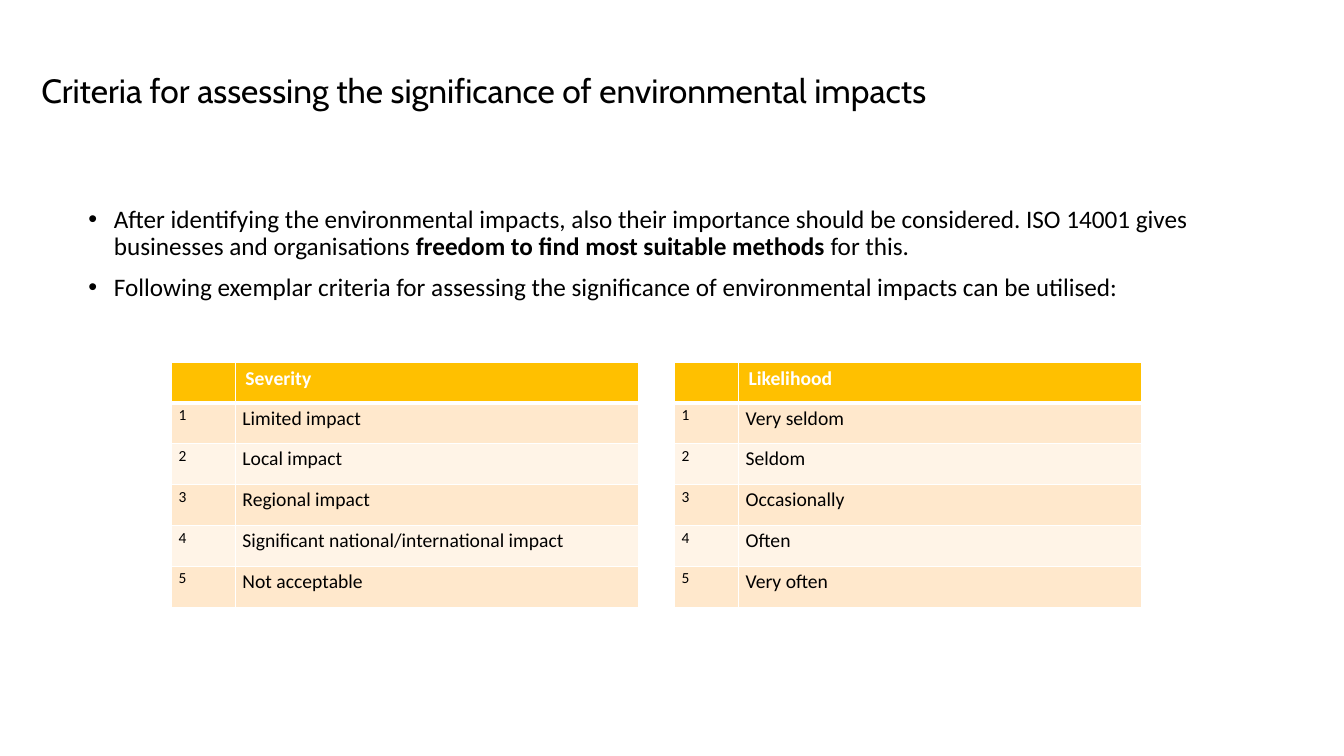
"""Build a slide on criteria for assessing environmental impacts."""
from lxml import etree
from pptx import Presentation
from pptx.dml.color import RGBColor
from pptx.enum import text
from pptx.oxml import ns
from pptx.util import Cm, Pt

TITLE = "Criteria for assessing the significance of environmental impacts"
POINTS = [
    [("After identifying the environmental impacts, also their importance should be considered. "
      "ISO 14001 gives businesses and organisations ", False),
     ("freedom to find most suitable methods ", True),
     ("for this.", False)],
    [("Following exemplar criteria for assessing the significance of environmental impacts "
      "can be utilised:", False)],
]
SCALES = [
    ("Severity", ["Limited impact", "Local impact", "Regional impact",
                  "Significant national/international impact", "Not acceptable"]),
    ("Likelihood", ["Very seldom", "Seldom", "Occasionally", "Often", "Very often"]),
]
BLACK, WHITE, HEADER = "000000", "FFFFFF", "FFC000"
BANDS = ["FFE8CC", "FFF4E7"]
COLUMNS = [1.61, 10.16]
ROW_HEIGHT, TABLE_LEFT, TABLE_TOP, TABLE_GAP = 1.03, 4.32, 9.12, 0.91


def paint(target, color):
    target.rgb = RGBColor.from_string(color)


def add_span(para, words, size, color=BLACK, bold=False, font="Calibri"):
    span = para.add_run()
    span.text = words
    span.font.name, span.font.size, span.font.bold = font, Pt(size), bold
    paint(span.font.color, color)


def place(shape, left, top, width, height):
    shape.left, shape.top, shape.width, shape.height = map(Cm, (left, top, width, height))


def add_bullet(para):
    props = para._p.get_or_add_pPr()
    props.set("marL", str(Cm(0.64)))
    props.set("indent", str(-Cm(0.64)))
    etree.SubElement(props, ns.qn("a:buFont")).set("typeface", "Arial")
    etree.SubElement(props, ns.qn("a:buChar")).set("char", "•")


def add_borders(cell, top, bottom):
    props = cell._tc.get_or_add_tcPr()
    for side, width in (("L", 1), ("R", 1), ("T", top), ("B", bottom)):
        line = etree.SubElement(props, ns.qn(f"a:ln{side}"), w=str(Pt(width)))
        fill = etree.SubElement(line, ns.qn("a:solidFill"))
        etree.SubElement(fill, ns.qn("a:srgbClr"), val=WHITE)


def add_scale(page, left, heading, levels):
    rows = [("", heading)] + [(str(i), level) for i, level in enumerate(levels, 1)]
    table = page.shapes.add_table(len(rows), len(COLUMNS), Cm(left), Cm(TABLE_TOP),
                                  Cm(sum(COLUMNS)), Cm(ROW_HEIGHT * len(rows))).table
    for column, width in zip(table.columns, COLUMNS):
        column.width = Cm(width)
    for r, row in enumerate(rows):
        for c, words in enumerate(row):
            cell = table.cell(r, c)
            add_borders(cell, 3 if r == 1 else 1, 3 if r == 0 else 1)
            cell.fill.solid()
            paint(cell.fill.fore_color, BANDS[(r - 1) % 2] if r else HEADER)
            para = cell.text_frame.paragraphs[0]
            if r:
                cell.margin_left = cell.margin_right = Cm(0.18)
                cell.margin_top = cell.margin_bottom = 0
                para.line_spacing = 1.15
            if words:
                add_span(para, words, 14 if c else 11, BLACK if r else WHITE, r == 0)


def main():
    deck = Presentation()
    deck.slide_width, deck.slide_height = Cm(33.87), Cm(19.05)
    page = deck.slides.add_slide(deck.slide_layouts[5])

    title = page.shapes.title
    place(title, 0.79, 0.94, 30.48, 2.77)
    title.text_frame.vertical_anchor = text.MSO_ANCHOR.MIDDLE
    para = title.text_frame.paragraphs[0]
    para.alignment, para.line_spacing = text.PP_ALIGN.LEFT, 0.9
    add_span(para, TITLE, 24, font="Cabin")

    box = page.shapes.add_textbox(Cm(1.98), Cm(5.08), Cm(30.48), Cm(9.19))
    frame = box.text_frame
    frame.word_wrap = True
    for i, point in enumerate(POINTS):
        para = frame.add_paragraph() if i else frame.paragraphs[0]
        add_bullet(para)
        para.line_spacing = 0.9
        para.space_before = Pt(10 if i else 0)
        for words, bold in point:
            add_span(para, words, 18, bold=bold)

    for i, (heading, levels) in enumerate(SCALES):
        add_scale(page, TABLE_LEFT + i * (sum(COLUMNS) + TABLE_GAP), heading, levels)

    deck.save("out.pptx")


if __name__ == "__main__":
    main()
